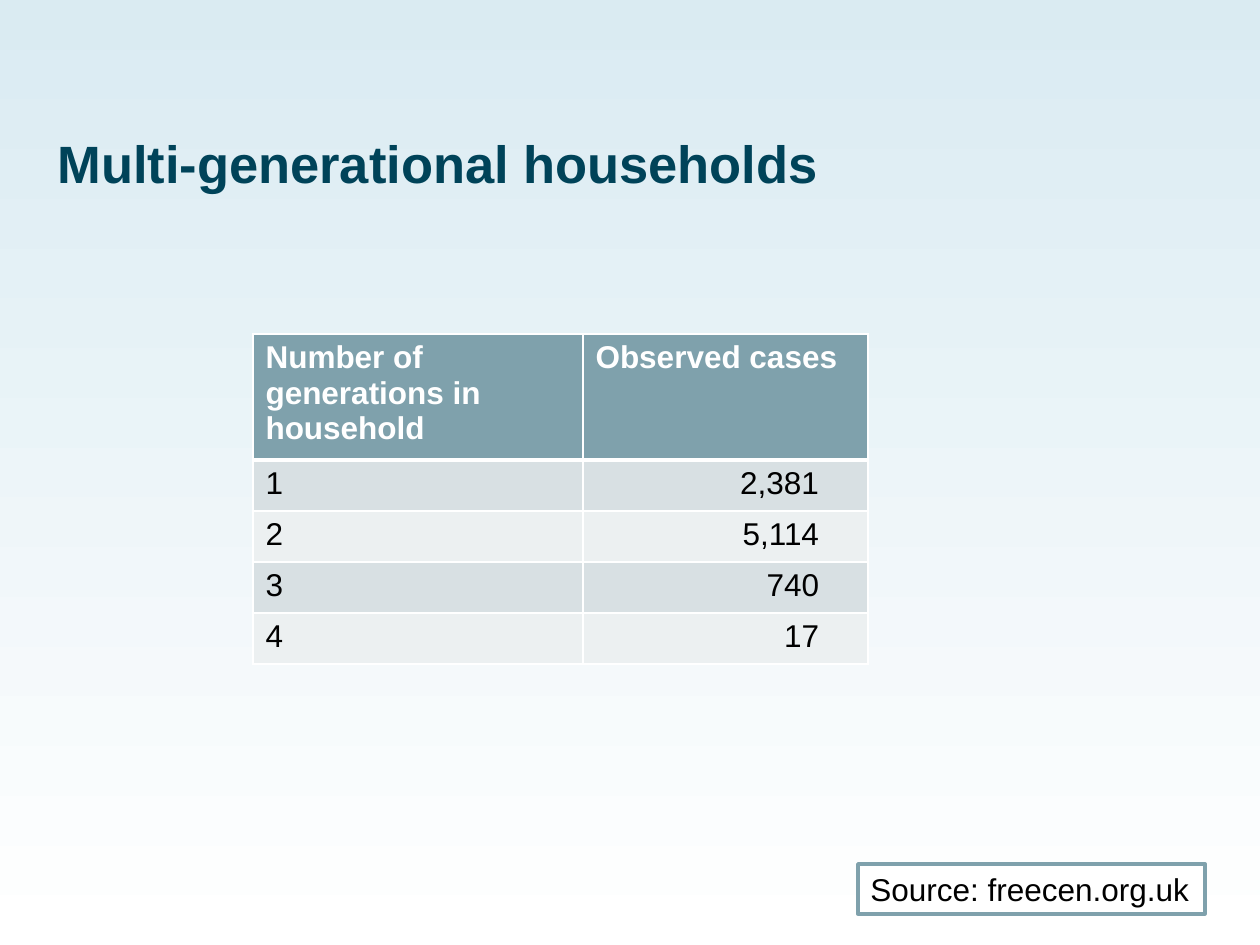
from dataclasses import dataclass
from typing import Any

from lxml.etree import SubElement
from pptx import Presentation
from pptx.dml.color import RGBColor
from pptx.enum.shapes import MSO_SHAPE as Preset
from pptx.enum.text import MSO_ANCHOR as Anchor, MSO_AUTO_SIZE as AutoSize, PP_ALIGN as Align
from pptx.oxml.ns import qn
from pptx.util import Emu, Pt

EMU_PER_PX = 914400 / 126


@dataclass(frozen=True)
class Theme:
    font: str = "Arial"
    title_size: int = 30
    body_size: int = 18
    title: str = "004359"
    accent: str = "7FA1AC"
    text: str = "000000"
    white: str = "FFFFFF"
    sky: str = "DAEBF2"
    bands: tuple[str, str] = ("D8E0E3", "ECF0F1")
    thin_border: int = 1
    header_border: int = 3
    box_line: int = 2


@dataclass(frozen=True)
class Box:
    left: int
    top: int
    width: int
    height: int

    def emu(self) -> tuple[Emu, ...]:
        return tuple(map(px, (self.left, self.top, self.width, self.height)))


@dataclass(frozen=True)
class HouseholdRow:
    generations: str
    cases: str


THEME = Theme()
TITLE_BOX = Box(45, 125, 1170, 179)
TABLE_BOX = Box(253, 334, 615, 322)
SOURCE_BOX = Box(858, 864, 347, 50)
COLUMN_WIDTHS = (330, 285)
HEADER_HEIGHT = 118
ROW_HEIGHT = 51
CASES_MARGIN = 49
HEADER = HouseholdRow("Number of generations in household", "Observed cases")
ROWS = (
    HouseholdRow("1", "2,381"),
    HouseholdRow("2", "5,114"),
    HouseholdRow("3", "740"),
    HouseholdRow("4", "17"),
)


def px(length: int) -> Emu:
    return Emu(round(length * EMU_PER_PX))


def rgb(color: str) -> RGBColor:
    return RGBColor.from_string(color)


def apply(target: Any, formats: dict[str, Any]) -> None:
    for name, value in formats.items():
        setattr(target, name, value)


def write(frame: Any, text: str, size: int, color: str, bold: bool = False,
          align: Align = Align.LEFT) -> None:
    paragraph = frame.paragraphs[0]
    paragraph.alignment = align
    run = paragraph.add_run()
    run.text = text
    apply(run.font, {"name": THEME.font, "size": Pt(size), "bold": bold})
    run.font.color.rgb = rgb(color)


def fill_solid(target: Any, color: str) -> None:
    target.fill.solid()
    target.fill.fore_color.rgb = rgb(color)


def add_borders(cell: Any, widths: dict[str, int]) -> None:
    properties = cell._tc.get_or_add_tcPr()
    for side, width in widths.items():
        line = SubElement(properties, qn(f"a:ln{side}"), w=str(Pt(width)))
        fill = SubElement(line, qn("a:solidFill"))
        SubElement(fill, qn("a:srgbClr"), val=THEME.white)


def paint_background(slide: Any) -> None:
    fill = slide.background.fill
    fill.gradient()
    fill.gradient_angle = 270
    for stop, color in zip(fill.gradient_stops, (THEME.sky, THEME.white)):
        stop.color.rgb = rgb(color)


def add_title(slide: Any, text: str) -> None:
    frame = slide.shapes.add_textbox(*TITLE_BOX.emu()).text_frame
    apply(frame, {"word_wrap": True, "vertical_anchor": Anchor.TOP})
    write(frame, text, THEME.title_size, THEME.title, bold=True)


def add_household_table(slide: Any) -> None:
    records = (HEADER, *ROWS)
    table = slide.shapes.add_table(len(records), len(COLUMN_WIDTHS), *TABLE_BOX.emu()).table
    for column, width in zip(table.columns, COLUMN_WIDTHS):
        column.width = px(width)
    for index, record in enumerate(records):
        is_header = index == 0
        table.rows[index].height = px(HEADER_HEIGHT if is_header else ROW_HEIGHT)
        background = THEME.accent if is_header else THEME.bands[(index - 1) % 2]
        widths = dict.fromkeys("LRTB", THEME.thin_border)
        if is_header:
            widths["B"] = THEME.header_border
        elif index == 1:
            widths["T"] = THEME.header_border
        for column, text in enumerate((record.generations, record.cases)):
            cell = table.cell(index, column)
            is_number = column == 1 and not is_header
            add_borders(cell, widths)
            fill_solid(cell, background)
            if is_number:
                cell.margin_right = px(CASES_MARGIN)
            write(cell.text_frame, text, THEME.body_size,
                  THEME.white if is_header else THEME.text, bold=is_header,
                  align=Align.RIGHT if is_number else Align.LEFT)


def add_source(slide: Any, text: str) -> None:
    shape = slide.shapes.add_shape(Preset.RECTANGLE, *SOURCE_BOX.emu())
    shape.shadow.inherit = False
    fill_solid(shape, THEME.white)
    shape.line.color.rgb = rgb(THEME.accent)
    shape.line.width = Pt(THEME.box_line)
    apply(shape.text_frame, {"word_wrap": False, "vertical_anchor": Anchor.TOP,
                             "auto_size": AutoSize.SHAPE_TO_FIT_TEXT})
    write(shape.text_frame, text, THEME.body_size, THEME.text)


def main() -> None:
    presentation = Presentation()
    apply(presentation, {"slide_width": px(1260), "slide_height": px(945)})
    slide = presentation.slides.add_slide(presentation.slide_layouts[6])
    paint_background(slide)
    add_title(slide, "Multi-generational households")
    add_household_table(slide)
    add_source(slide, "Source: freecen.org.uk")
    presentation.save("out.pptx")


if __name__ == "__main__":
    main()
